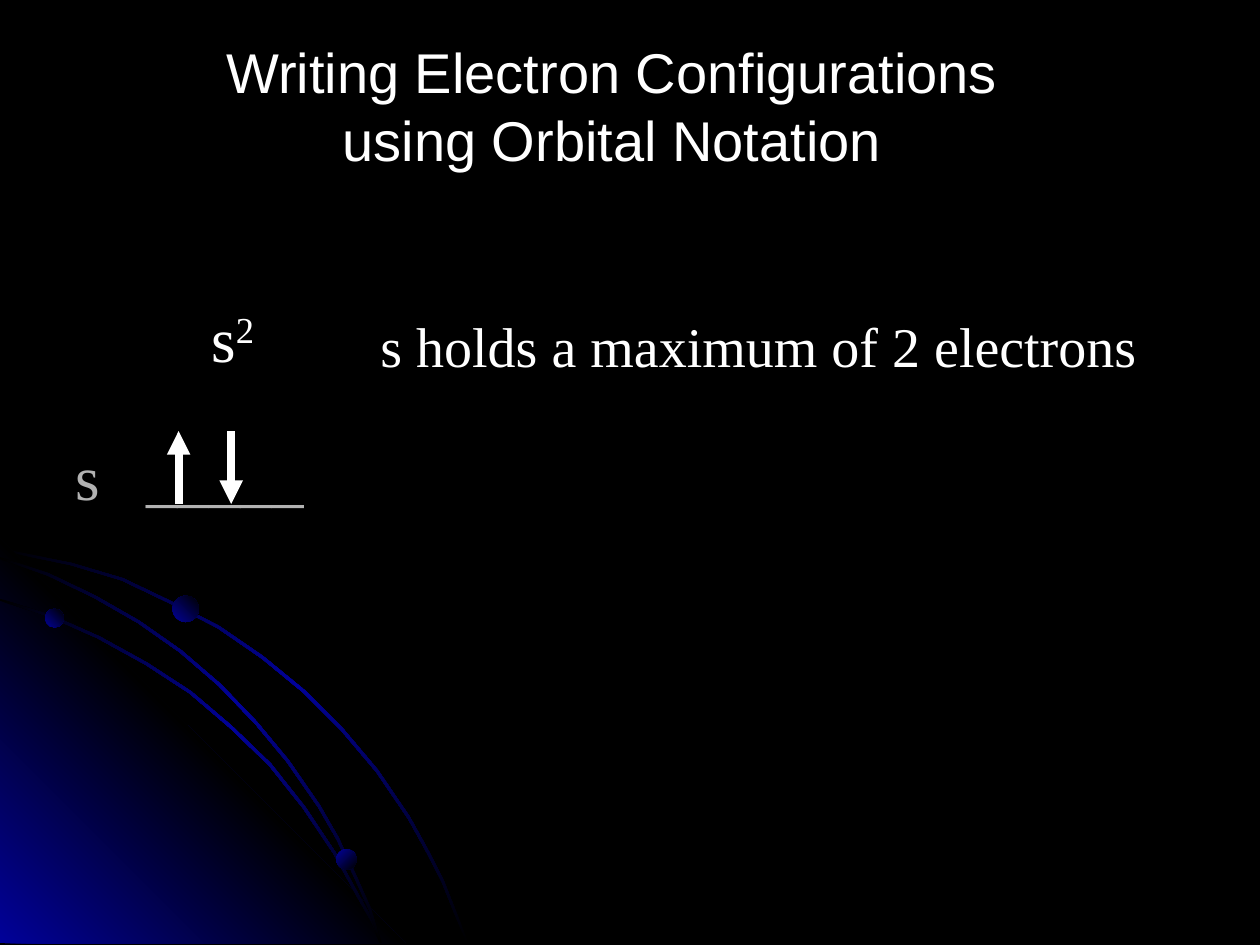
from dataclasses import dataclass

from lxml import etree
from pptx import Presentation
from pptx.dml.color import RGBColor
from pptx.enum.shapes import MSO_CONNECTOR, MSO_SHAPE
from pptx.enum.text import MSO_AUTO_SIZE, PP_ALIGN
from pptx.oxml.ns import qn
from pptx.util import Cm, Pt

LINE = MSO_CONNECTOR.STRAIGHT
OVAL = MSO_SHAPE.OVAL
GROW = MSO_AUTO_SIZE.SHAPE_TO_FIT_TEXT
LEFT, MID = PP_ALIGN.LEFT, PP_ALIGN.CENTER

COLORS = {"black": "000000", "blue": "010199", "white": "FFFFFF", "gray": "B2B2B2"}
SERIF, SANS = "Times New Roman", "Arial"
FLOOR = 19.02  # lower edge of the orbit art, cm
BAND = 0.04    # shift between the two edges of an orbit, cm
GLOW = ("black", "blue", "black")
UP, DOWN = 45, 315  # gradient direction, counter-clockwise

Point = tuple[float, float]


@dataclass
class Ball:
    x: float
    y: float
    size: float
    angle: int


@dataclass
class Run:
    text: str
    raised: bool = False


@dataclass
class Label:
    box: tuple[float, float, float, float]
    lines: list[list[Run]]
    size: int
    font: str = SERIF
    color: str = "white"
    align: PP_ALIGN = LEFT
    wrap: bool = True
    tab: float = 0


@dataclass
class Spin:
    x: float
    start: float
    end: float


ORBITS: list[list[Point]] = [
    [(0, 11.05), (0.71, 11.2), (1.45, 11.35), (2.49, 11.66), (3.45, 12.12),
     (4.42, 12.62), (5.31, 13.23), (6.15, 13.92), (6.91, 14.68), (7.62, 15.52),
     (8.26, 16.46), (8.61, 17.09), (8.94, 17.73), (9.19, 18.36), (9.45, FLOOR)],
    [(0, 12.07), (1.04, 12.4), (2.01, 12.83), (2.97, 13.36), (3.86, 13.94),
     (4.67, 14.63), (5.46, 15.39), (6.15, 16.26), (6.76, 17.17), (7.26, 18.08),
     (7.52, 18.54), (7.7, FLOOR)],
    [(0, 11.23), (0.99, 11.56), (1.93, 12.01), (2.82, 12.52), (3.66, 13.11),
     (4.45, 13.79), (5.18, 14.55), (5.82, 15.32), (6.45, 16.23), (6.83, 16.89),
     (7.16, 17.6), (7.47, 18.29), (7.7, FLOOR)],
]
CORNER: list[Point] = [(8.18, FLOOR), (0, FLOOR), (0, 10.85)]
BALLS = [
    Ball(0.91, 12.27, 0.38, UP),
    Ball(6.78, 17.12, 0.41, DOWN),
    Ball(3.48, 12.01, 0.53, UP),
]
LABELS = [
    Label((1.27, 8.69, 17.78, 1.78), [[Run("s\t_____")]], 36, color="gray", tab=1.43),
    Label((7.42, 6.15, 19.48, 1.6), [[Run("s holds a maximum of 2 electrons")]], 32),
    Label((4.01, 5.92, 15.67, 1.78), [[Run("s"), Run("2", raised=True)]], 36),
    Label((4.24, 0.64, 16.2, 3), [[Run("Writing Electron Configurations")],
                                  [Run("using Orbital Notation")]],
          32, SANS, align=MID, wrap=False),
]
SPINS = [Spin(3.6, 10.16, 8.69), Spin(4.66, 8.69, 10.16)]


def rgb(name: str) -> RGBColor:
    return RGBColor.from_string(COLORS[name])


def shade(shape, names: tuple[str, ...], angle: int) -> None:
    """Fill with evenly spaced gradient stops and no outline."""
    shape.shadow.inherit = False
    shape.line.fill.background()
    shape.fill.gradient()
    shape.fill.gradient_angle = angle
    stops = next(shape._element.iter(qn("a:gsLst")))
    for old in list(stops):
        stops.remove(old)
    for i, name in enumerate(names):
        pos = str(100000 * i // (len(names) - 1))
        stop = etree.SubElement(stops, qn("a:gs"), pos=pos)
        etree.SubElement(stop, qn("a:srgbClr"), val=COLORS[name])


def add_area(slide, points: list[Point], names: tuple[str, ...], angle: int) -> None:
    spots = [(Cm(x), Cm(y)) for x, y in points]
    pen = slide.shapes.build_freeform(*spots[0])
    pen.add_line_segments(spots[1:], close=True)
    shade(pen.convert_to_shape(), names, angle)


def add_orbit(slide, edge: list[Point]) -> None:
    inner = [(max(x - BAND, 0), min(y + BAND, FLOOR)) for x, y in edge]
    add_area(slide, edge + inner[::-1], GLOW, DOWN)


def add_ball(slide, ball: Ball) -> None:
    size = Cm(ball.size)
    shape = slide.shapes.add_shape(OVAL, Cm(ball.x), Cm(ball.y), size, size)
    shade(shape, ("blue", "black"), ball.angle)


def add_label(slide, label: Label) -> None:
    frame = slide.shapes.add_textbox(*map(Cm, label.box)).text_frame
    frame.word_wrap = label.wrap
    frame.auto_size = GROW
    for i, line in enumerate(label.lines):
        para = frame.add_paragraph() if i else frame.paragraphs[0]
        para.alignment = label.align
        if label.tab:
            tabs = etree.SubElement(para._p.get_or_add_pPr(), qn("a:tabLst"))
            etree.SubElement(tabs, qn("a:tab"), pos=str(Cm(label.tab)), algn="l")
        for part in line:
            run = para.add_run()
            run.text = part.text
            run.font.name = label.font
            run.font.size = Pt(label.size)
            run.font.color.rgb = rgb(label.color)
            if part.raised:
                run._r.get_or_add_rPr().set("baseline", "30000")


def add_spin(slide, spin: Spin) -> None:
    x = Cm(spin.x)
    arrow = slide.shapes.add_connector(LINE, x, Cm(spin.start), x, Cm(spin.end))
    arrow.line.color.rgb = rgb("white")
    arrow.line.width = Pt(4.5)
    etree.SubElement(arrow.line._get_or_add_ln(), qn("a:tailEnd"), type="triangle")
    etree.SubElement(arrow._element.spPr, qn("a:effectLst"))


def main() -> None:
    deck = Presentation()
    deck.slide_width, deck.slide_height = Cm(25.4), Cm(19.05)
    slide = deck.slides.add_slide(deck.slide_layouts[6])
    slide.background.fill.solid()
    slide.background.fill.fore_color.rgb = rgb("black")

    # Orbit art in the lower left corner
    add_orbit(slide, ORBITS[0])
    add_area(slide, CORNER, ("blue", "black", "blue"), UP)
    for edge in ORBITS[1:]:
        add_orbit(slide, edge)
    for ball in BALLS:
        add_ball(slide, ball)

    # Title, notation and electron spins
    for label in LABELS:
        add_label(slide, label)
    for spin in SPINS:
        add_spin(slide, spin)

    deck.save("out.pptx")


if __name__ == "__main__":
    main()
